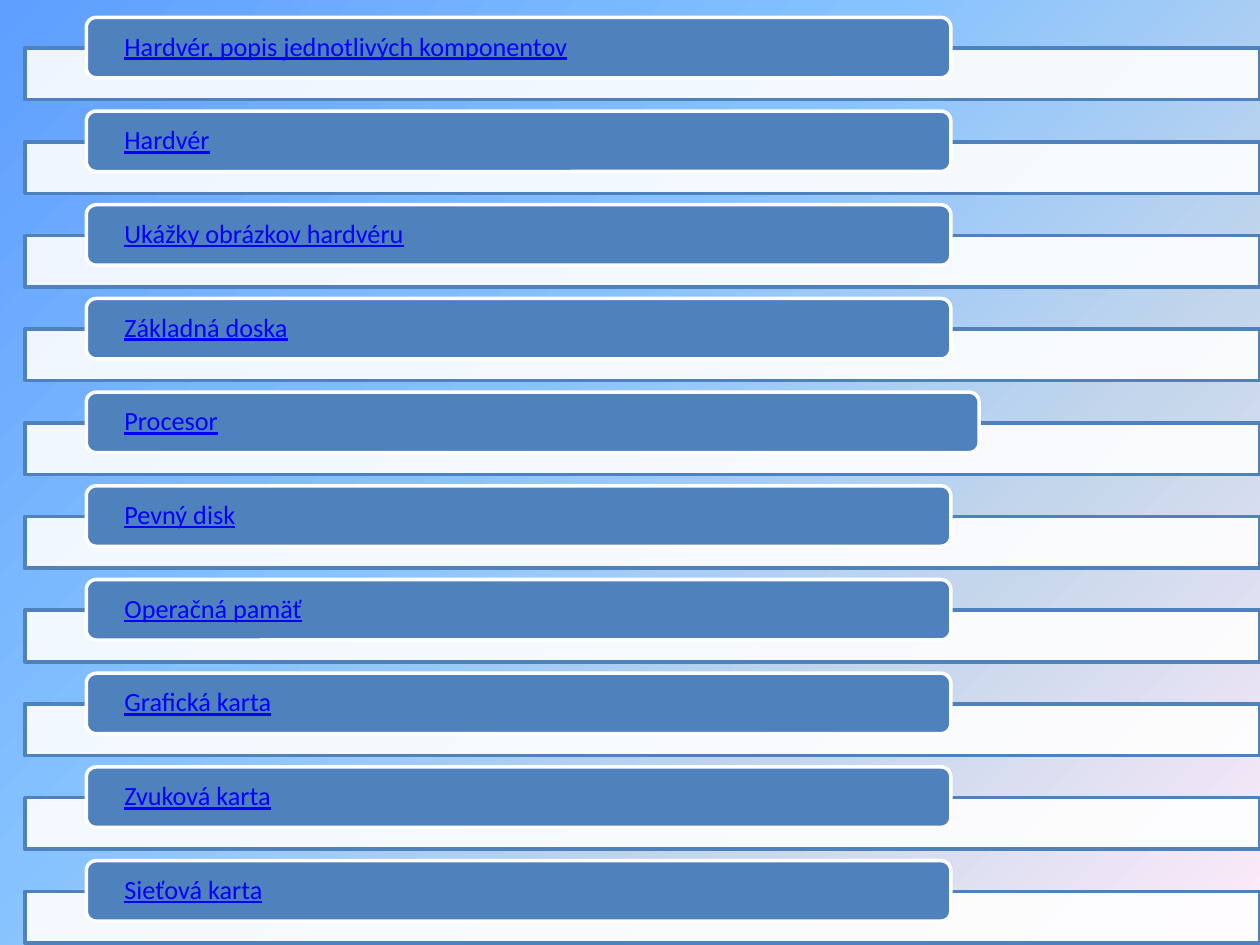
from lxml.etree import SubElement
from pptx import Presentation
from pptx.dml.color import RGBColor
from pptx.enum.shapes import MSO_SHAPE as Shape
from pptx.enum.text import MSO_ANCHOR as Anchor, PP_ALIGN as Align
from pptx.oxml.ns import qn
from pptx.util import Cm, Pt

BLUE = RGBColor(0x4F, 0x81, 0xBD)
WHITE = RGBColor(0xFF, 0xFF, 0xFF)
LINK_BLUE = RGBColor(0x00, 0x00, 0xFF)
SKY_STOPS = [
    (0, RGBColor(0x5E, 0x9E, 0xFF)),
    (40, RGBColor(0x85, 0xC2, 0xFF)),
    (70, RGBColor(0xC4, 0xD6, 0xEB)),
    (100, RGBColor(0xFF, 0xEB, 0xFA)),
]
TAB_WIDTH = 17.43
WIDE_TAB_WIDTH = 18
TOPICS = [
    ("Hardvér, popis jednotlivých komponentov", TAB_WIDTH),
    ("Hardvér", TAB_WIDTH),
    ("Ukážky obrázkov hardvéru", TAB_WIDTH),
    ("Základná doska", TAB_WIDTH),
    ("Procesor", WIDE_TAB_WIDTH),
    ("Pevný disk", TAB_WIDTH),
    ("Operačná pamäť", TAB_WIDTH),
    ("Grafická karta", TAB_WIDTH),
    ("Zvuková karta", TAB_WIDTH),
    ("Sieťová karta", TAB_WIDTH),
]


def paint_background(page):
    """Fill the page with the diagonal sky gradient."""
    fill = page.background.fill
    fill.gradient()
    fill.gradient_angle = 315
    stop_list = next(page.element.iter(qn("a:gsLst")))
    for stop in list(stop_list):
        stop_list.remove(stop)
    for percent, color in SKY_STOPS:
        stop = SubElement(stop_list, qn("a:gs"), pos=str(percent * 1000))
        SubElement(stop, qn("a:srgbClr"), val=str(color))


def add_panel(page, kind, box, fill_color, line_color):
    """Add a flat outlined shape in a box given in centimetres."""
    panel = page.shapes.add_shape(kind, *(Cm(length) for length in box))
    panel.shadow.inherit = False
    panel.fill.solid()
    panel.fill.fore_color.rgb = fill_color
    panel.line.color.rgb = line_color
    panel.line.width = Pt(2)
    return panel


def write_topic(tab, topic):
    """Write the underlined topic into its tab."""
    frame = tab.text_frame
    frame.text = topic
    frame.word_wrap = True
    frame.vertical_anchor = Anchor.MIDDLE
    frame.margin_left = frame.margin_right = Cm(0.71)
    frame.margin_top = frame.margin_bottom = 0
    para = frame.paragraphs[0]
    para.alignment = Align.LEFT
    para.line_spacing = 0.9
    font = para.runs[0].font
    font.name = "Calibri"
    font.size = Pt(15)
    font.underline = True
    font.color.rgb = LINK_BLUE


def add_topic_row(page, box, topic, tab_width):
    """Place a translucent strip with a topic tab overlapping its top."""
    left, top, width, height = box
    strip_box = (left, top + 0.62, width, height - 0.62)
    strip = add_panel(page, Shape.RECTANGLE, strip_box, WHITE, BLUE)
    color = next(strip.fill._xPr.iter(qn("a:srgbClr")))
    SubElement(color, qn("a:alpha"), val="90000")
    tab_box = (left + 1.24, top, tab_width, 1.22)
    tab = add_panel(page, Shape.ROUNDED_RECTANGLE, tab_box, BLUE, WHITE)
    write_topic(tab, topic)


def add_topic_list(page, box):
    """Stack the topic rows at an equal pitch in the box."""
    left, top, width, height = box
    row_height = 1.66
    pitch = (height - row_height) / (len(TOPICS) - 1)
    for index, (topic, tab_width) in enumerate(TOPICS):
        row_box = (left, top + index * pitch, width, row_height)
        add_topic_row(page, row_box, topic, tab_width)


def main():
    """Build and save the deck."""
    deck = Presentation()
    deck.slide_width, deck.slide_height = Cm(25.4), Cm(19.05)
    page = deck.slides.add_slide(deck.slide_layouts[6])
    paint_background(page)
    add_topic_list(page, (0.5, 0.35, 24.9, 18.66))
    deck.save("out.pptx")


if __name__ == "__main__":
    main()
